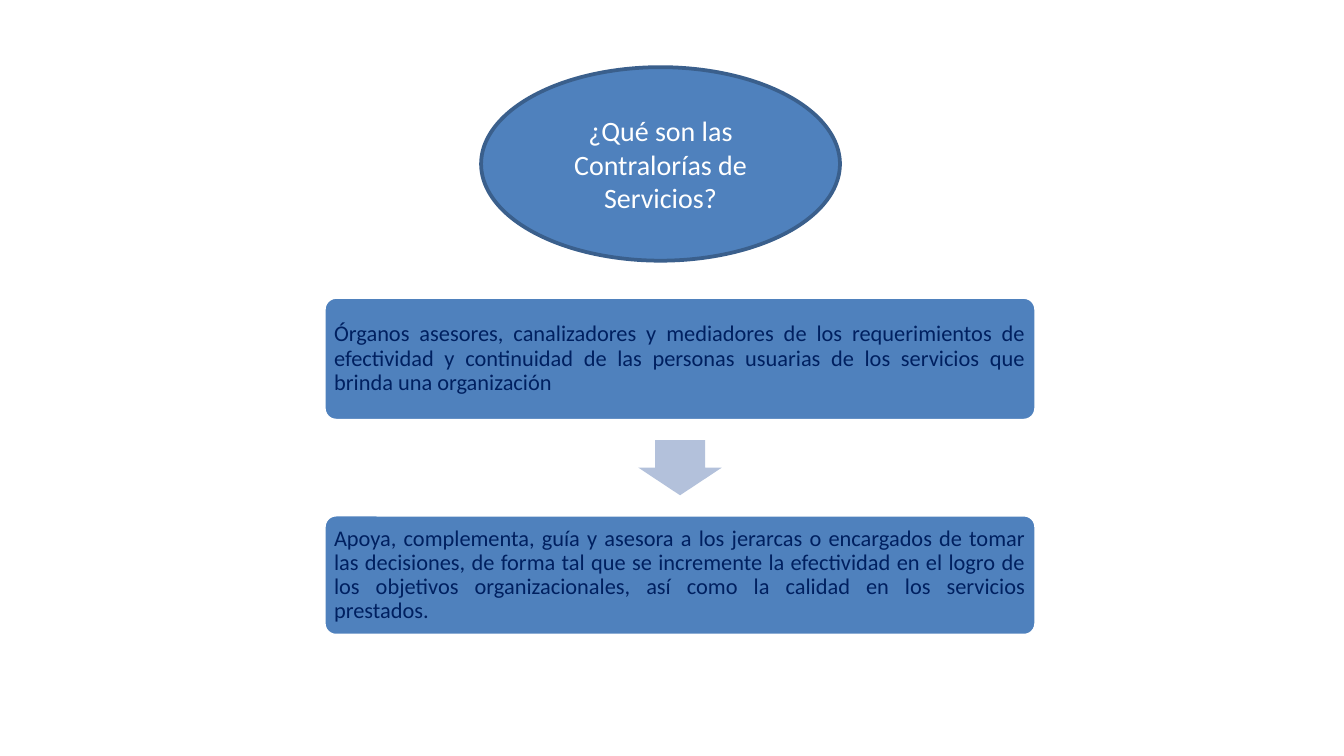
import pptx
import pptx.util
import pptx.dml.color
import pptx.enum.shapes
import pptx.enum.text
from dataclasses import dataclass

SHAPES = pptx.enum.shapes.MSO_SHAPE
ALIGN = pptx.enum.text.PP_ALIGN


@dataclass(frozen=True)
class Theme:
    font: str = "Calibri"
    blue: str = "4F81BD"
    outline: str = "3A5F8C"
    arrow: str = "B3C1DB"
    navy: str = "002060"
    white: str = "FFFFFF"
    question_size: float = 15
    answer_size: float = 12
    line_width: float = 2


theme = Theme()

presentation = pptx.Presentation()
presentation.slide_width = pptx.util.Inches(10)
presentation.slide_height = presentation.slide_width * 9 // 16
slide = presentation.slides.add_slide(presentation.slide_layouts[6])

# Square grid: 100 columns across the slide, rows of the same size
cell = presentation.slide_width / 100


def add_block(preset, left, top, width, height, fill, line=None):
    """Add a preset shape placed in grid columns and rows."""
    block = slide.shapes.add_shape(
        preset, *(round(cell * n) for n in (left, top, width, height)))
    block.shadow.inherit = False
    block.fill.solid()
    block.fill.fore_color.rgb = pptx.dml.color.RGBColor.from_string(fill)
    if line:
        block.line.color.rgb = pptx.dml.color.RGBColor.from_string(line)
        block.line.width = pptx.util.Pt(theme.line_width)
    else:
        block.line.fill.background()
    return block


def write(block, text, size, color, alignment):
    block.text_frame.word_wrap = True
    block.text_frame.vertical_anchor = pptx.enum.text.MSO_ANCHOR.MIDDLE
    paragraph = block.text_frame.paragraphs[0]
    paragraph.text = text
    paragraph.alignment = alignment
    paragraph.font.name = theme.font
    paragraph.font.size = pptx.util.Pt(size)
    paragraph.font.color.rgb = pptx.dml.color.RGBColor.from_string(color)
    return paragraph


question = add_block(SHAPES.OVAL, 35.8, 5, 26.7, 14.4, theme.blue, theme.outline)
write(question, "¿Qué son las Contralorías de Servicios?",
      theme.question_size, theme.white, ALIGN.CENTER)

answer_left, answer_width = 24.1, 53
answers = [
    (22.1, 9.2, "Órganos asesores, canalizadores y mediadores de los requerimientos "
                "de efectividad y continuidad de las personas usuarias de los "
                "servicios que brinda una organización"),
    (38.3, 9, "Apoya, complementa, guía y asesora a los jerarcas o encargados de "
              "tomar las decisiones, de forma tal que se incremente la efectividad "
              "en el logro de los objetivos organizacionales, así como la calidad "
              "en los servicios prestados."),
]
for top, height, text in answers:
    answer = add_block(SHAPES.ROUNDED_RECTANGLE, answer_left, top,
                       answer_width, height, theme.blue, theme.white)
    answer.adjustments[0] = 0.1
    frame = answer.text_frame
    frame.margin_left = frame.margin_right = round(cell / 2)
    frame.margin_top = frame.margin_bottom = round(cell / 2)
    paragraph = write(answer, text, theme.answer_size, theme.navy, ALIGN.JUSTIFY)
    paragraph.line_spacing = 0.9
    paragraph.space_after = pptx.util.Pt(theme.answer_size * 0.35)

# The arrow sits centred in the gap between the two answers
arrow_width, arrow_height = 6.2, 4.1
gap_top = answers[0][0] + answers[0][1]
gap_bottom = answers[1][0]
arrow = add_block(SHAPES.DOWN_ARROW,
                  answer_left + (answer_width - arrow_width) / 2,
                  (gap_top + gap_bottom - arrow_height) / 2,
                  arrow_width, arrow_height, theme.arrow)
arrow.adjustments[0] = 0.6
arrow.adjustments[1] = 0.5

presentation.save("out.pptx")
